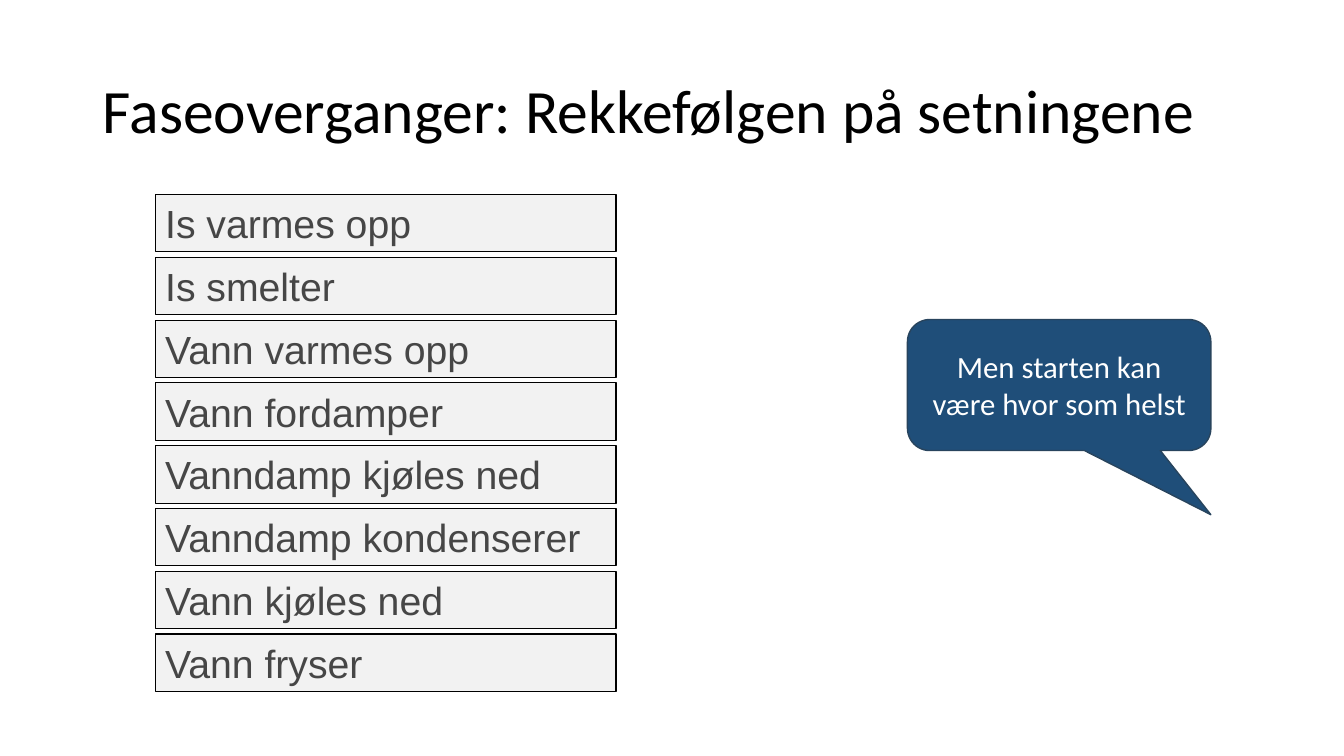
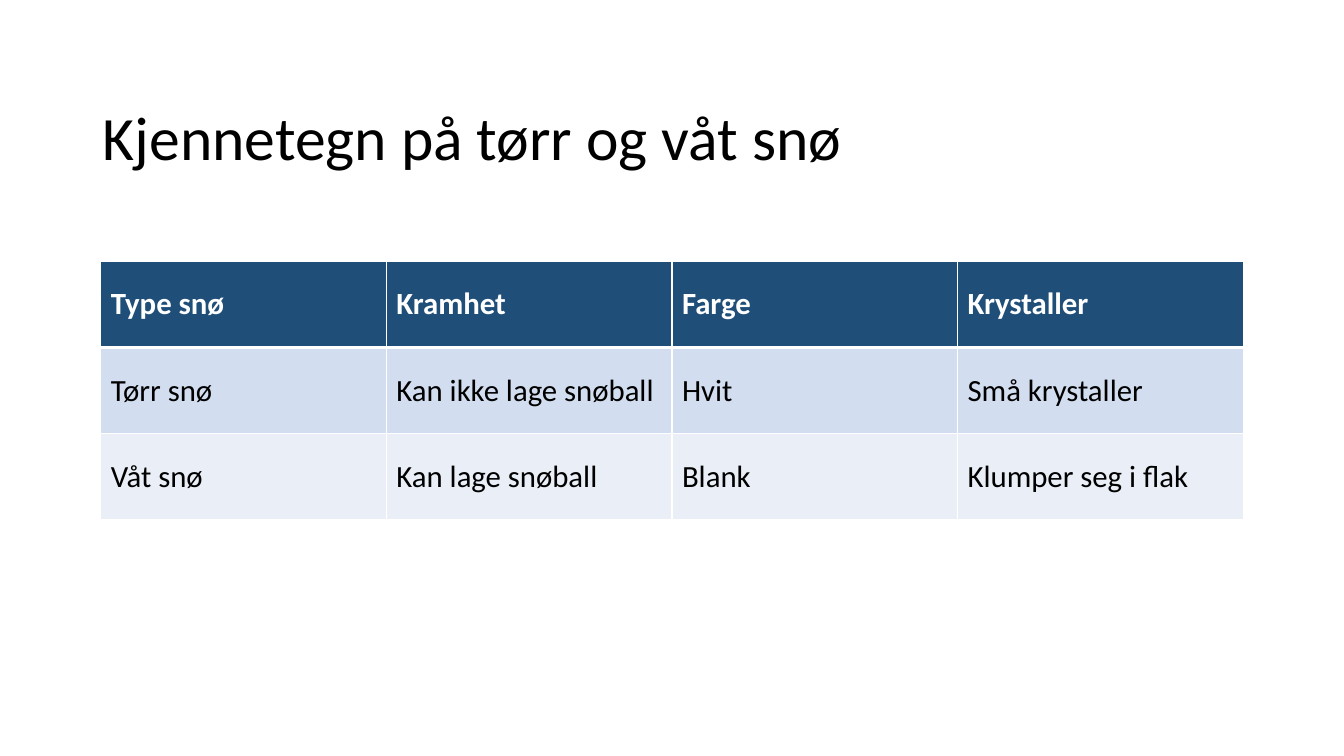
from dataclasses import dataclass

from lxml import etree
from pptx import Presentation
from pptx.dml.color import RGBColor
from pptx.enum.shapes import MSO_SHAPE
from pptx.enum.text import MSO_ANCHOR, PP_ALIGN
from pptx.oxml.ns import qn
from pptx.util import Inches, Pt

CALLOUT = MSO_SHAPE.ROUNDED_RECTANGULAR_CALLOUT
MIDDLE = MSO_ANCHOR.MIDDLE
TOP = MSO_ANCHOR.TOP
LEFT = PP_ALIGN.LEFT
CENTER = PP_ALIGN.CENTER

BLACK = "000000"
WHITE = "FFFFFF"
NAVY = "1F4E79"
NAVY_EDGE = "28445D"
SENTENCE_FILL = "F2F2F2"
SENTENCE_TEXT = "464646"
ROW_FILLS = (NAVY, "D2DEEF", "EAEFF7")

SENTENCES = (
    "Is varmes opp",
    "Is smelter",
    "Vann varmes opp",
    "Vann fordamper",
    "Vanndamp kjøles ned",
    "Vanndamp kondenserer",
    "Vann kjøles ned",
    "Vann fryser",
)
FIRST_SENTENCE_TOP = 1.93
LAST_SENTENCE_TOP = 6.29

SNOW_ROWS = (
    ("Type snø", "Kramhet", "Farge", "Krystaller"),
    ("Tørr snø", "Kan ikke lage snøball", "Hvit", "Små krystaller"),
    ("Våt snø", "Kan lage snøball", "Blank", "Klumper seg i flak"),
)


@dataclass(frozen=True)
class TextStyle:
    size: float
    color: str
    font: str = "Calibri"
    bold: bool = False
    align: PP_ALIGN = LEFT
    anchor: MSO_ANCHOR = MIDDLE


@dataclass(frozen=True)
class Box:
    left: float
    top: float
    width: float
    height: float

    def lengths(self) -> tuple:
        return tuple(Inches(v) for v in (self.left, self.top, self.width, self.height))


TITLE = TextStyle(44, BLACK)
SENTENCE = TextStyle(28, SENTENCE_TEXT, font="Arial", anchor=TOP)
REMARK = TextStyle(22, WHITE, align=CENTER)
TABLE_HEAD = TextStyle(22, WHITE, bold=True)
TABLE_BODY = TextStyle(22, BLACK)


def rgb(color: str) -> RGBColor:
    return RGBColor.from_string(color)


def write(frame, text: str, style: TextStyle):
    frame.word_wrap = True
    paragraph = frame.paragraphs[0]
    paragraph.alignment = style.align
    run = paragraph.add_run()
    run.text = text
    run.font.size = Pt(style.size)
    run.font.name = style.font
    run.font.bold = style.bold
    run.font.color.rgb = rgb(style.color)
    return paragraph


def paint(shape, fill: str, line: str, line_width: float) -> None:
    shape.fill.solid()
    shape.fill.fore_color.rgb = rgb(fill)
    shape.line.color.rgb = rgb(line)
    shape.line.width = Pt(line_width)


def add_titled_slide(deck, text: str, top: float):
    slide = deck.slides.add_slide(deck.slide_layouts[5])
    title = slide.shapes.title
    title.left, title.top, title.width, title.height = Box(0.92, top, 11.5, 1.45).lengths()
    title.text_frame.vertical_anchor = TITLE.anchor
    write(title.text_frame, text, TITLE).line_spacing = 0.9
    return slide


def add_sentence(slide, text: str, top: float) -> None:
    sentence = slide.shapes.add_textbox(*Box(1.54, top, 4.57, 0.57).lengths())
    paint(sentence, SENTENCE_FILL, BLACK, 0.75)
    sentence.text_frame.vertical_anchor = SENTENCE.anchor
    write(sentence.text_frame, text, SENTENCE)


def add_remark(slide, text: str, box: Box) -> None:
    remark = slide.shapes.add_shape(CALLOUT, *box.lengths())
    remark.shadow.inherit = False
    for index, value in enumerate((0.5, 0.99, 0.17)):
        remark.adjustments[index] = value
    paint(remark, NAVY, NAVY_EDGE, 1)
    remark.text_frame.vertical_anchor = REMARK.anchor
    write(remark.text_frame, text, REMARK)


def set_borders(cell, top: float, bottom: float) -> None:
    properties = cell._tc.get_or_add_tcPr()
    widths = {"a:lnL": 1, "a:lnR": 1, "a:lnT": top, "a:lnB": bottom}
    for position, (tag, width) in enumerate(widths.items()):
        border = etree.Element(qn(tag), w=str(Pt(width)))
        fill = etree.SubElement(border, qn("a:solidFill"))
        etree.SubElement(fill, qn("a:srgbClr"), val=WHITE)
        properties.insert(position, border)


def add_snow_table(slide, rows: tuple, box: Box) -> None:
    table = slide.shapes.add_table(len(rows), len(rows[0]), *box.lengths()).table
    for row_index, (texts, fill) in enumerate(zip(rows, ROW_FILLS)):
        style = TABLE_BODY if row_index else TABLE_HEAD
        for column_index, text in enumerate(texts):
            cell = table.cell(row_index, column_index)
            cell.fill.solid()
            cell.fill.fore_color.rgb = rgb(fill)
            cell.vertical_anchor = style.anchor
            write(cell.text_frame, text, style)
            set_borders(
                cell,
                top=3 if row_index == 1 else 1,
                bottom=3 if row_index == 0 else 1,
            )


def build_phase_slide(deck) -> None:
    slide = add_titled_slide(deck, "Faseoverganger: Rekkefølgen på setningene", 0.4)
    pitch = (LAST_SENTENCE_TOP - FIRST_SENTENCE_TOP) / (len(SENTENCES) - 1)
    for index, text in enumerate(SENTENCES):
        add_sentence(slide, text, FIRST_SENTENCE_TOP + index * pitch)
    add_remark(slide, "Men starten kan være hvor som helst", Box(9, 3.17, 3.01, 1.3))


def build_snow_slide(deck) -> None:
    slide = add_titled_slide(deck, "Kjennetegn på tørr og våt snø", 0.67)
    add_snow_table(slide, SNOW_ROWS, Box(1, 2.59, 11.33, 2.57))


def main() -> None:
    deck = Presentation()
    deck.slide_width = Inches(13.33)
    deck.slide_height = Inches(7.5)
    build_phase_slide(deck)
    build_snow_slide(deck)
    deck.save("out.pptx")


if __name__ == "__main__":
    main()
